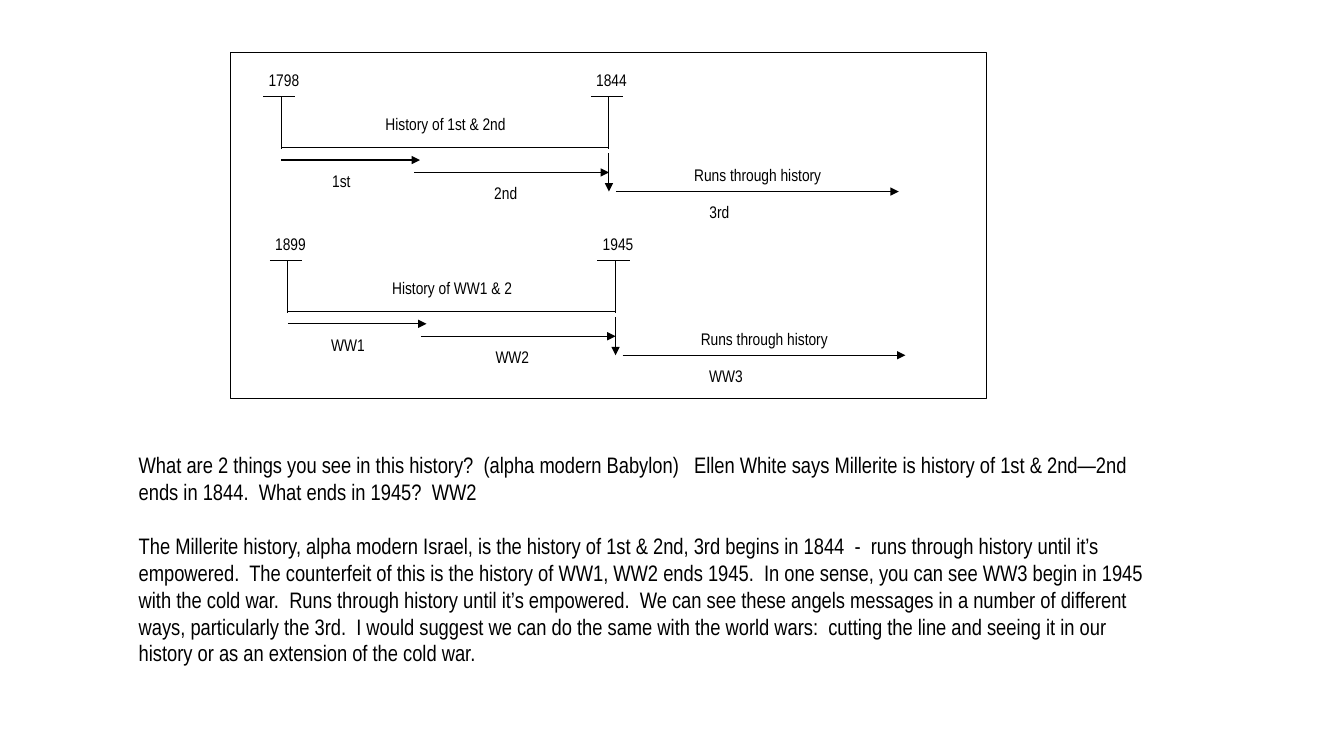
from dataclasses import dataclass

from lxml import etree
from pptx import Presentation
from pptx.dml import color
from pptx.enum import shapes, text
from pptx.oxml import ns
from pptx.util import Pt


@dataclass(frozen=True)
class Theme:
    ink: color.RGBColor = color.RGBColor(0, 0, 0)
    font: str = "Arial Narrow"
    label: float = 12
    body: float = 16
    line: float = 0.75
    inset: float = 3


@dataclass(frozen=True)
class Era:
    x: float
    y: float
    years: tuple[str, str]
    span: str
    steps: tuple[str, str, str]


@dataclass(frozen=True)
class Box:
    x: float
    y: float
    w: float
    h: float


@dataclass(frozen=True)
class Line:
    x1: float
    y1: float
    x2: float
    y2: float
    head: bool = False


THEME = Theme()
SPAN = 234
FRAME = Box(165, 37.5, 540, 247.5)
NOTES = Box(92, 319, 737, 177)
YEAR = Box(-13, 0, 29.5, 20)
HISTORY = Box(5, 31.7, 224.6, 18)
RUNS = Box(243.4, 67.7, 193.7, 18)
STEPS = (Box(18, 72, 49.7, 18), Box(135.4, 80.6, 49.7, 18), Box(288, 94.3, 49.7, 18))
MARK = (Line(0, 22.4, 0, 59.6), Line(-13, 22.4, 10, 22.4))
TRACK = (
    Line(0, 58.5, SPAN, 58.5),
    Line(0, 67.5, 99, 67.5, True),
    Line(95, 76.4, SPAN, 76.4, True),
    Line(SPAN, 62.6, SPAN, 90, True),
    Line(239, 90, 441, 90, True),
)
ERAS = (
    Era(201, 46.8, ("1798", "1844"), "History of 1st & 2nd", ("1st", "2nd", "3rd")),
    Era(205.7, 163.8, ("1899", "1945"), "History of WW1 & 2", ("WW1", "WW2", "WW3")),
)
BODY = (
    "What are 2 things you see in this history?  (alpha modern Babylon)   Ellen White says "
    "Millerite is history of 1st & 2nd—2nd ends in 1844.  What ends in 1945?  WW2",
    "The Millerite history, alpha modern Israel, is the history of 1st & 2nd, 3rd begins in 1844"
    "  -  runs through history until it’s empowered.  The counterfeit of this is the history of "
    "WW1, WW2 ends 1945.  In one sense, you can see WW3 begin in 1945 with the cold war.  Runs "
    "through history until it’s empowered.  We can see these angels messages in a number of "
    "different ways, particularly the 3rd.  I would suggest we can do the same with the world "
    "wars:  cutting the line and seeing it in our history or as an extension of the cold war.",
)


def style(para, words: str, size: float) -> None:
    """Fill a paragraph with words in the theme font."""
    para.text = words
    para.font.name = THEME.font
    para.font.size = Pt(size)
    para.font.color.rgb = THEME.ink


def stroke(line) -> None:
    """Give an outline the theme colour and width."""
    line.color.rgb = THEME.ink
    line.width = Pt(THEME.line)


def label(slide, box: Box, words: str, x: float, y: float) -> None:
    """Write a centred label in a box moved by x and y."""
    shape = slide.shapes.add_textbox(Pt(box.x + x), Pt(box.y + y), Pt(box.w), Pt(box.h))
    frame = shape.text_frame
    frame.word_wrap = True
    frame.margin_left = frame.margin_right = Pt(THEME.inset)
    frame.margin_top = frame.margin_bottom = Pt(THEME.inset)
    para = frame.paragraphs[0]
    style(para, words, THEME.label)
    para.alignment = text.PP_ALIGN.CENTER


def rule(slide, seg: Line, x: float, y: float) -> None:
    """Draw a line moved by x and y, with its arrowhead if any."""
    link = slide.shapes.add_connector(
        shapes.MSO_CONNECTOR.STRAIGHT,
        Pt(seg.x1 + x), Pt(seg.y1 + y), Pt(seg.x2 + x), Pt(seg.y2 + y),
    )
    stroke(link.line)
    if seg.head:
        etree.SubElement(link.line._get_or_add_ln(), ns.qn("a:tailEnd"), type="triangle")
    etree.SubElement(link._element.spPr, ns.qn("a:effectLst"))


def draw(slide, era: Era) -> None:
    """Draw one timeline with its years, steps and captions."""
    for num, year in enumerate(era.years):
        left = era.x + num * SPAN
        for seg in MARK:
            rule(slide, seg, left, era.y)
        label(slide, YEAR, year, left, era.y)
    for seg in TRACK:
        rule(slide, seg, era.x, era.y)
    for box, words in zip(STEPS, era.steps):
        label(slide, box, words, era.x, era.y)
    label(slide, HISTORY, era.span, era.x, era.y)
    label(slide, RUNS, "Runs through history", era.x, era.y)


def border(slide) -> None:
    """Draw the frame around both timelines."""
    shape = slide.shapes.add_shape(
        shapes.MSO_SHAPE.RECTANGLE, Pt(FRAME.x), Pt(FRAME.y), Pt(FRAME.w), Pt(FRAME.h)
    )
    shape.shadow.inherit = False
    shape.fill.background()
    stroke(shape.line)


def notes(slide) -> None:
    """Write the body text below the frame."""
    shape = slide.shapes.add_textbox(Pt(NOTES.x), Pt(NOTES.y), Pt(NOTES.w), Pt(NOTES.h))
    frame = shape.text_frame
    frame.word_wrap = True
    for num, words in enumerate(BODY):
        para = frame.add_paragraph() if num else frame.paragraphs[0]
        style(para, words, THEME.body)
        para.space_before = Pt(19.2 if num else 0)


def main() -> None:
    """Build the slide and save it."""
    deck = Presentation()
    deck.slide_width, deck.slide_height = Pt(960), Pt(540)
    slide = deck.slides.add_slide(deck.slide_layouts[6])
    border(slide)
    for era in ERAS:
        draw(slide, era)
    notes(slide)
    deck.save("out.pptx")


if __name__ == "__main__":
    main()
